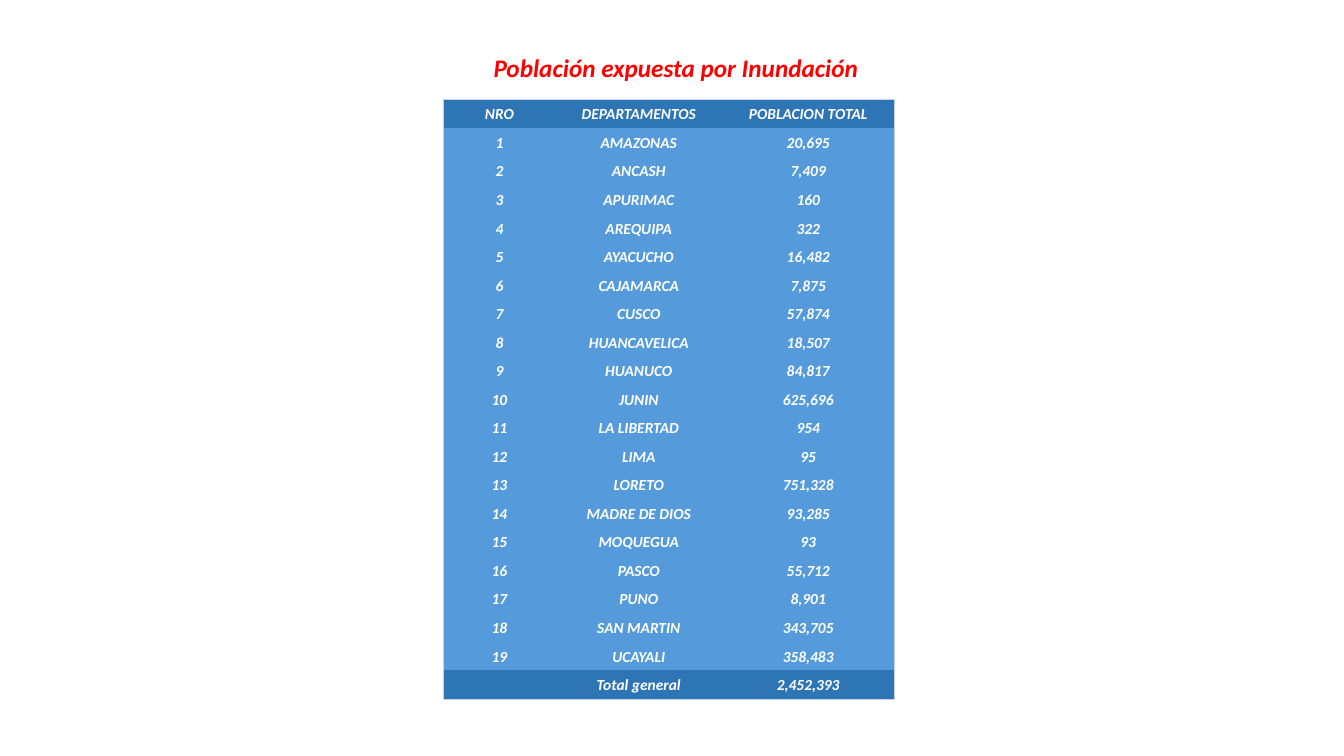
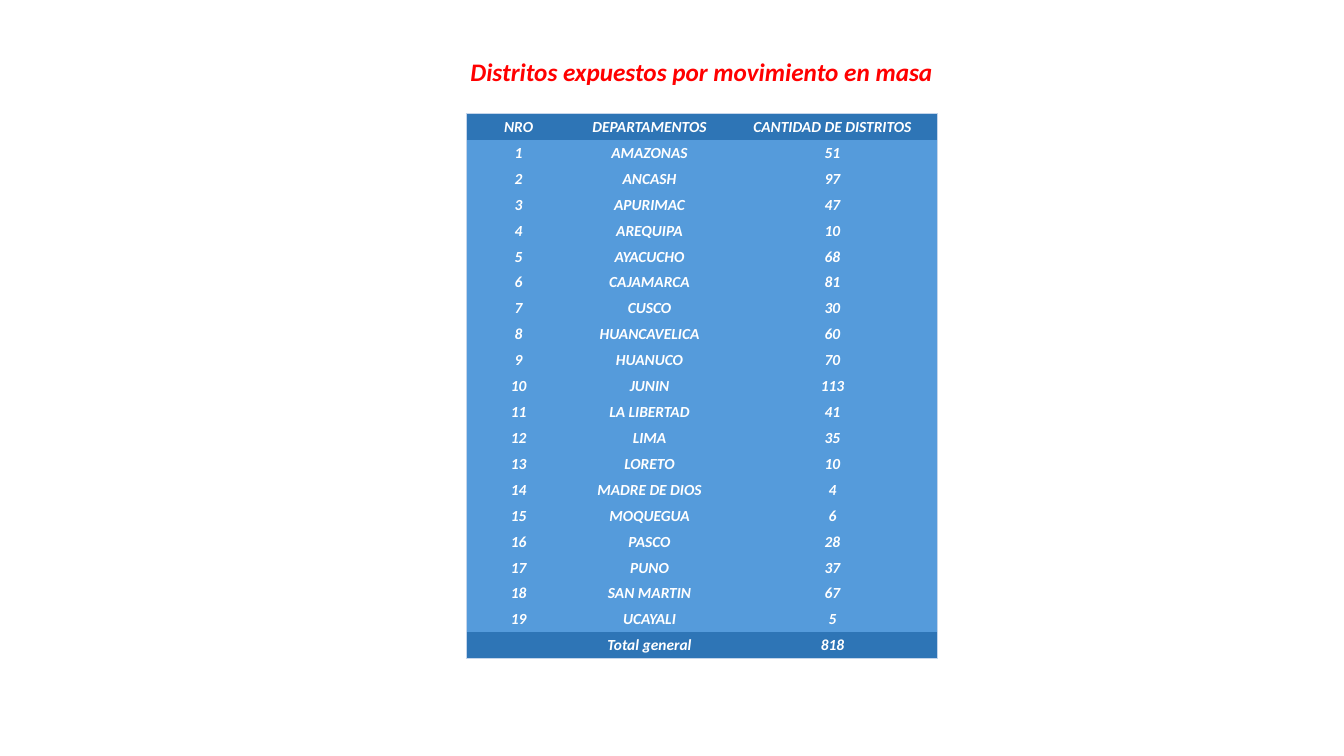
from lxml import etree
from pptx import Presentation, util as u
from pptx.dml.color import RGBColor
from pptx.enum import text
from pptx.oxml import ns

COLORS = {
    "title": "FF0000",
    "band": "2E75B6",
    "body": "559BDB",
    "border": "C4D5EB",
    "text": "FFFFFF",
}
FONT = "Calibri"
TITLE_SIZE = 18
CELL_SIZE = 11
TITLE_HEIGHT = 28.8
CELL_INSET = 0.72
PLAIN_TABLE_STYLE = "{2D5ABB26-0587-4C30-8999-92F81FD0307C}"

DEPARTMENTS = [
    "AMAZONAS", "ANCASH", "APURIMAC", "AREQUIPA", "AYACUCHO", "CAJAMARCA",
    "CUSCO", "HUANCAVELICA", "HUANUCO", "JUNIN", "LA LIBERTAD", "LIMA",
    "LORETO", "MADRE DE DIOS", "MOQUEGUA", "PASCO", "PUNO", "SAN MARTIN",
    "UCAYALI",
]
FLOOD_POPULATION = [
    20695, 7409, 160, 322, 16482, 7875, 57874, 18507, 84817, 625696,
    954, 95, 751328, 93285, 93, 55712, 8901, 343705, 358483,
]
LANDSLIDE_DISTRICTS = [
    51, 97, 47, 10, 68, 81, 30, 60, 70, 113,
    41, 35, 10, 4, 6, 28, 37, 67, 5,
]


def color(name):
    return RGBColor.from_string(COLORS[name])


def write(paragraph, content, size, color_name):
    paragraph.alignment = text.PP_ALIGN.CENTER
    run = paragraph.add_run()
    run.text = content
    font = run.font
    font.name = FONT
    font.size = u.Pt(size)
    font.bold = font.italic = True
    font.color.rgb = color(color_name)


def add_title(slide, content, left, top, width):
    shape = slide.shapes.add_textbox(
        u.Pt(left), u.Pt(top), u.Pt(width), u.Pt(TITLE_HEIGHT))
    frame = shape.text_frame
    frame.word_wrap = False
    frame.auto_size = text.MSO_AUTO_SIZE.SHAPE_TO_FIT_TEXT
    write(frame.paragraphs[0], content, TITLE_SIZE, "title")


def add_border(cell, side):
    properties = cell._tc.get_or_add_tcPr()
    line = etree.SubElement(
        properties, ns.qn(f"a:ln{side}"), w=str(u.Pt(0.5)))
    fill = etree.SubElement(line, ns.qn("a:solidFill"))
    etree.SubElement(fill, ns.qn("a:srgbClr"), val=COLORS["border"])


def fill_cell(cell, content, fill_name, sides):
    for side in sides:
        add_border(cell, side)
    cell.fill.solid()
    cell.fill.fore_color.rgb = color(fill_name)
    cell.vertical_anchor = text.MSO_ANCHOR.MIDDLE
    cell.margin_left = cell.margin_right = cell.margin_top = u.Pt(CELL_INSET)
    cell.margin_bottom = 0
    paragraph = cell.text_frame.paragraphs[0]
    if content:
        write(paragraph, content, CELL_SIZE, "text")
    else:
        etree.SubElement(
            paragraph._p, ns.qn("a:endParaRPr"), sz=str(CELL_SIZE * 100))


def add_department_table(slide, heading, values, total, left, top, widths, height):
    rows = [("NRO", "DEPARTAMENTOS", heading)]
    rows += [(str(number), department, f"{value:,}")
             for number, (department, value)
             in enumerate(zip(DEPARTMENTS, values), 1)]
    rows.append(("", "Total general", f"{total:,}"))
    last_row, last_column = len(rows) - 1, len(widths) - 1

    shape = slide.shapes.add_table(
        len(rows), len(widths),
        u.Pt(left), u.Pt(top), u.Pt(sum(widths)), u.Pt(height))
    table = shape.table
    table._tbl.tblPr.find(ns.qn("a:tableStyleId")).text = PLAIN_TABLE_STYLE
    for column, width in zip(table.columns, widths):
        column.width = u.Pt(width)
    for row_index, row in enumerate(rows):
        table.rows[row_index].height = u.Pt(height / len(rows))
        fill_name = "band" if row_index in (0, last_row) else "body"
        for column_index, content in enumerate(row):
            edges = {
                "L": column_index == 0,
                "R": column_index == last_column,
                "T": row_index == 0,
                "B": row_index == last_row,
            }
            sides = [side for side, is_outer in edges.items() if is_outer]
            fill_cell(table.cell(row_index, column_index),
                      content, fill_name, sides)


def main():
    presentation = Presentation()
    presentation.slide_width = u.Pt(960)
    presentation.slide_height = u.Pt(540)
    blank = presentation.slide_layouts[6]

    slide = presentation.slides.add_slide(blank)
    add_title(slide, "Población expuesta por Inundación", 344.2, 33.8, 277.2)
    add_department_table(
        slide, "POBLACION TOTAL", FLOOD_POPULATION, 2452393,
        left=316.8, top=71.3, widths=(80, 119, 123.1), height=428.4)

    slide = presentation.slides.add_slide(blank)
    add_title(slide, "Distritos expuestos por movimiento en masa",
              326.9, 36.7, 348.5)
    add_department_table(
        slide, "CANTIDAD DE DISTRITOS", LANDSLIDE_DISTRICTS, 818,
        left=332.8, top=81.2, widths=(75.4, 111.6, 149.8), height=388.8)

    presentation.save("out.pptx")


if __name__ == "__main__":
    main()
